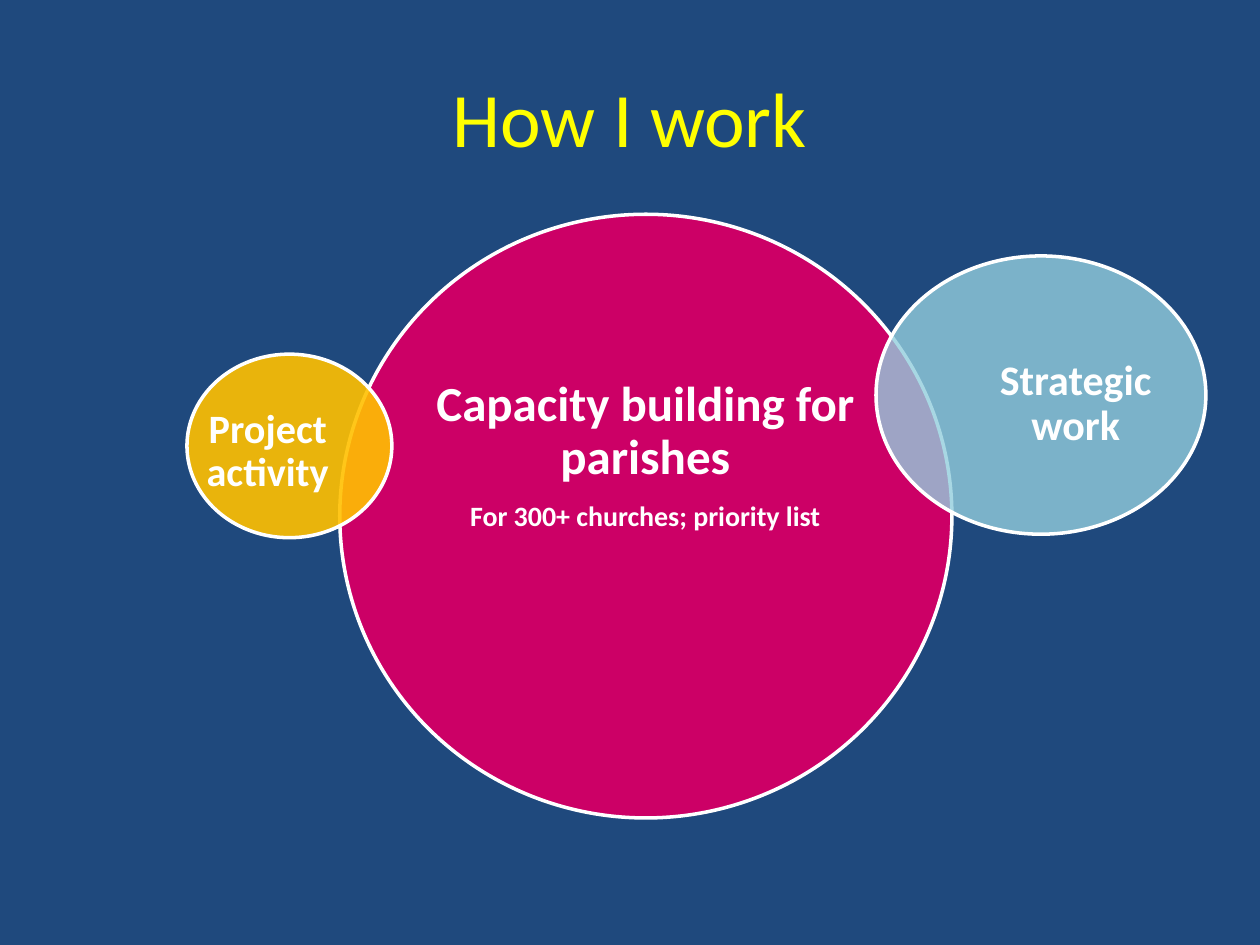
from lxml import etree
from pptx import Presentation
from pptx.dml.color import RGBColor
from pptx.enum.shapes import MSO_SHAPE
from pptx.enum.text import MSO_ANCHOR, PP_ALIGN
from pptx.oxml.ns import qn
from pptx.util import Cm, Pt

OVAL = MSO_SHAPE.OVAL
MIDDLE = MSO_ANCHOR.MIDDLE
CENTER = PP_ALIGN.CENTER
TITLE_ONLY = 5


def color(hex_text):
    return RGBColor.from_string(hex_text)


class SlideBuilder:
    font = "Calibri"
    white = "FFFFFF"
    yellow = "FFFF00"
    navy = "1F497D"

    def __init__(self, deck):
        self.page = deck.slides.add_slide(deck.slide_layouts[TITLE_ONLY])
        background = self.page.background.fill
        background.solid()
        background.fore_color.rgb = color(self.navy)

    def add_span(self, para, text, size, hex_text, bold=False):
        para.alignment = CENTER
        span = para.add_run()
        span.text = text
        span.font.name = self.font
        span.font.size = Pt(size)
        span.font.bold = bold
        span.font.color.rgb = color(hex_text)

    def title(self, text, left, top, width, height):
        box = self.page.shapes.title
        box.left, box.top, box.width, box.height = map(Cm, (left, top, width, height))
        box.text_frame.vertical_anchor = MIDDLE
        self.add_span(box.text_frame.paragraphs[0], text, 44, self.yellow)

    def circle(self, left, top, width, height, fill, opacity=100):
        oval = self.page.shapes.add_shape(OVAL, *map(Cm, (left, top, width, height)))
        oval.shadow.inherit = False
        oval.fill.solid()
        oval.fill.fore_color.rgb = color(fill)
        oval.line.color.rgb = color(self.white)
        oval.line.width = Pt(2)
        if opacity < 100:
            tint = oval.fill._xPr.find(qn("a:solidFill"))[0]
            etree.SubElement(tint, qn("a:alpha"), val=str(opacity * 1000))

    def label(self, left, top, width, height, lines):
        box = self.page.shapes.add_textbox(*map(Cm, (left, top, width, height)))
        frame = box.text_frame
        frame.word_wrap = True
        frame.vertical_anchor = MIDDLE
        frame.margin_left = frame.margin_right = 0
        frame.margin_top = frame.margin_bottom = 0
        for index, (text, size) in enumerate(lines):
            para = frame.add_paragraph() if index else frame.paragraphs[0]
            para.line_spacing = 0.9
            if index < len(lines) - 1:
                para.space_after = Pt(round(size * 0.35))
            self.add_span(para, text, size, self.white, bold=True)


def main():
    deck = Presentation()
    deck.slide_width, deck.slide_height = Cm(25.4), Cm(19.05)
    slide = SlideBuilder(deck)

    # Heading
    slide.title("How I work", 1.27, 0.76, 22.86, 3.18)

    # Central circle: capacity building
    slide.circle(6.85, 4.32, 12.34, 12.17, "CC0066")
    slide.label(8.49, 6.45, 9.04, 5.49, [
        ("Capacity building for parishes", 28),
        ("For 300+ churches; priority list", 16),
    ])

    # Right circle: strategic work
    slide.circle(17.66, 5.16, 6.65, 5.61, "93CDDD", opacity=80)
    slide.label(19.69, 6.6, 3.99, 3.1, [("Strategic work", 24)])

    # Left circle: project activity, label wide enough for its longest word
    slide.circle(3.77, 7.14, 4.13, 3.7, "FFC000", opacity=90)
    slide.label(4.1, 8.1, 2.6, 2.03, [("Project activity", 23)])

    deck.save("out.pptx")


if __name__ == "__main__":
    main()
